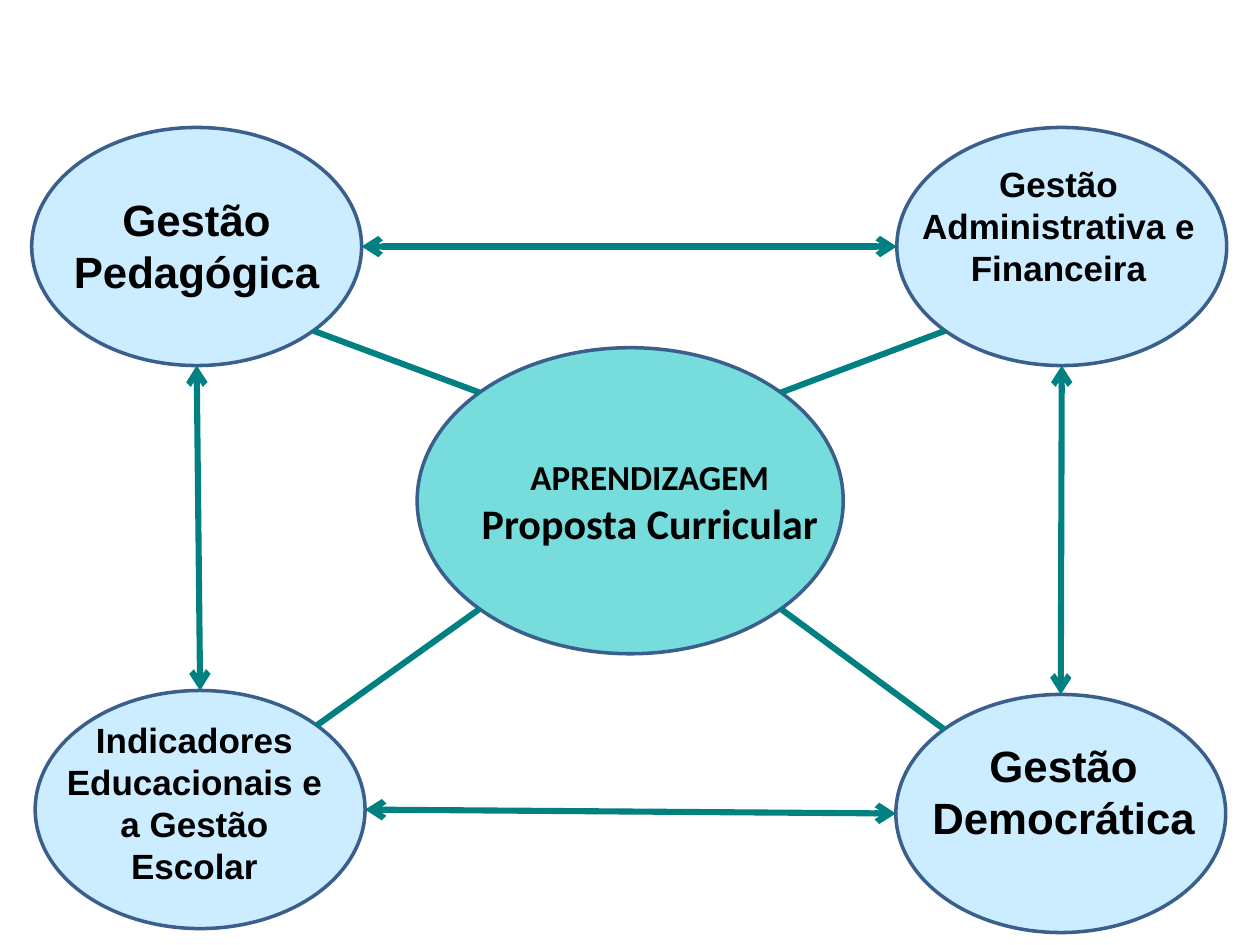
from math import cos, radians, sin

from pptx import Presentation
from pptx.dml.color import RGBColor
from pptx.enum.shapes import MSO_CONNECTOR, MSO_SHAPE
from pptx.enum.text import MSO_ANCHOR, PP_ALIGN
from pptx.oxml.ns import qn
from pptx.util import Cm, Pt
from lxml.etree import SubElement

COLORS = {"center": "33CCCC", "node": "CCECFF", "outline": "3A5F8C",
          "link": "008080", "text": "000000"}
NODE_SIZE = (6.65, 4.8)

# Ellipses: left, top, width, height in cm
ELLIPSES = {
    "center": (8.41, 7.01, 8.59, 6.17),
    "pedagogica": (0.64, 2.57, *NODE_SIZE),
    "democratica": (18.06, 14, *NODE_SIZE),
    "indicadores": (0.71, 13.92, *NODE_SIZE),
    "administrativa": (18.08, 2.57, *NODE_SIZE),
}

# Links: start, angle on it, end, angle on it (clockwise from the right)
SPOKES = [("center", 315, "administrativa", 135), ("center", 225, "pedagogica", 45),
          ("center", 135, "indicadores", 315), ("center", 45, "democratica", 225)]
SIDES = [("pedagogica", 0, "administrativa", 180), ("pedagogica", 90, "indicadores", 270),
         ("indicadores", 0, "democratica", 180), ("democratica", 270, "administrativa", 90)]

# Labels: centre x, centre y, width, height in cm, font, (text, size) lines, shadow
LABELS = [
    (13.1, 10.12, 9.52, 2.2, "Calibri",
     [("APRENDIZAGEM", 20), ("Proposta Curricular", 24)], False),
    (3.96, 4.94, 6.7, 2.8, "Arial", [("Gestão Pedagógica", 25)], True),
    (21.34, 4.55, 6.1, 2.82, "Arial", [("Gestão Administrativa e Financeira", 20)], False),
    (21.44, 15.95, 6.3, 2.4, "Arial", [("Gestão Democrática", 25)], False),
    (3.92, 16.17, 5.8, 3.7, "Arial",
     [("Indicadores Educacionais e a Gestão Escolar", 20)], False),
]


def rgb(name):
    return RGBColor.from_string(COLORS[name])


def add_ellipse(s, name, box):
    sp = s.shapes.add_shape(MSO_SHAPE.OVAL, *map(Cm, box))
    sp.shadow.inherit = False
    sp.fill.solid()
    sp.fill.fore_color.rgb = rgb("center" if name == "center" else "node")
    sp.line.color.rgb = rgb("outline")
    sp.line.width = Pt(2)
    if name == "center":
        color = sp.fill._xPr.find(qn("a:solidFill"))[0]
        SubElement(color, qn("a:alpha"), val="67000")


def rim_point(name, angle):
    left, top, w, h = ELLIPSES[name]
    a = radians(angle)
    return Cm(left + w / 2 * (1 + cos(a))), Cm(top + h / 2 * (1 + sin(a)))


def add_link(s, start, start_angle, end, end_angle, arrows=False):
    line = s.shapes.add_connector(MSO_CONNECTOR.STRAIGHT, *rim_point(start, start_angle),
                                  *rim_point(end, end_angle))
    line.line.color.rgb = rgb("link")
    line.line.width = Pt(3.5)
    if arrows:
        for tag in ("a:headEnd", "a:tailEnd"):
            SubElement(line.line._get_or_add_ln(), qn(tag), type="arrow")
    SubElement(line._element.spPr, qn("a:effectLst"))


def add_text_shadow(r):
    effects = SubElement(r._r.get_or_add_rPr(), qn("a:effectLst"))
    shadow = SubElement(effects, qn("a:outerShdw"), blurRad="38100", dist="38100",
                        dir="2700000", algn="tl")
    color = SubElement(shadow, qn("a:srgbClr"), val=COLORS["text"])
    SubElement(color, qn("a:alpha"), val="43000")


def add_label(s, x, y, w, h, font, lines, shadow):
    tf = s.shapes.add_textbox(Cm(x - w / 2), Cm(y - h / 2), Cm(w), Cm(h)).text_frame
    tf.word_wrap = True
    tf.vertical_anchor = MSO_ANCHOR.MIDDLE
    for i, (text, size) in enumerate(lines):
        p = tf.add_paragraph() if i else tf.paragraphs[0]
        p.alignment = PP_ALIGN.CENTER
        p.line_spacing = Pt(size * 1.2)
        r = p.add_run()
        r.text = text
        r.font.color.rgb = rgb("text")
        if shadow:
            add_text_shadow(r)
        for key, value in {"name": font, "size": Pt(size), "bold": True}.items():
            setattr(r.font, key, value)


def main():
    prs = Presentation()
    prs.slide_width, prs.slide_height = Cm(25.4), Cm(19.05)
    s = prs.slides.add_slide(prs.slide_layouts[6])

    # Ellipses
    for name, box in ELLIPSES.items():
        add_ellipse(s, name, box)

    # Plain spokes and two-way arrows
    for link in SPOKES:
        add_link(s, *link)
    for link in SIDES:
        add_link(s, *link, arrows=True)

    # Labels
    for label in LABELS:
        add_label(s, *label)

    prs.save("out.pptx")


if __name__ == "__main__":
    main()
